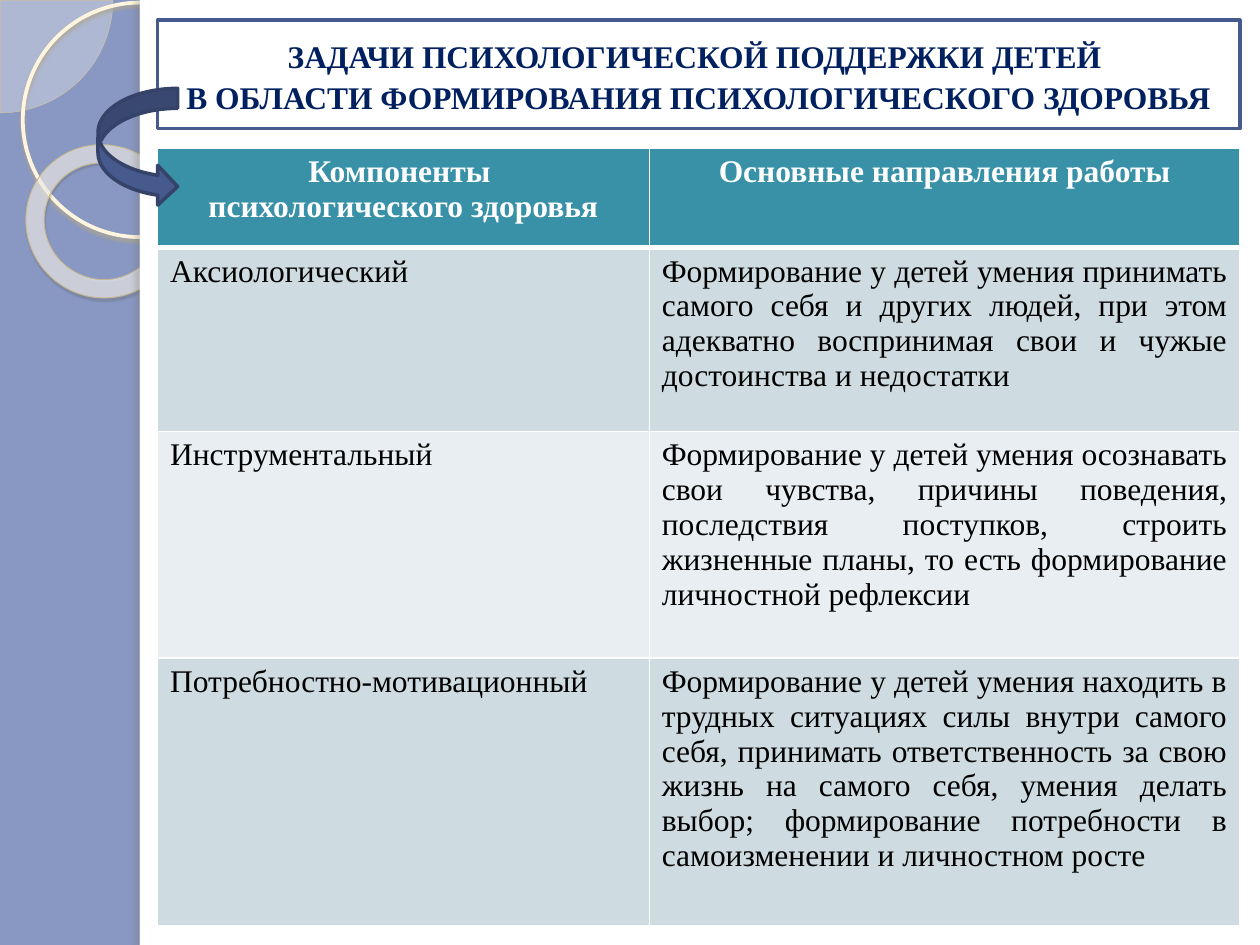
"""Build a slide on the tasks of psychological support for children."""
from dataclasses import dataclass
from typing import Any, Optional

from lxml import etree
from pptx import Presentation
from pptx.dml.color import RGBColor
from pptx.enum.shapes import MSO_SHAPE
from pptx.enum.text import MSO_ANCHOR, PP_ALIGN
from pptx.oxml.ns import qn
from pptx.util import Pt

PIE, OVAL, DONUT = MSO_SHAPE.CHORD, MSO_SHAPE.OVAL, MSO_SHAPE.DONUT
PIE = MSO_SHAPE.PIE
RECTANGLE, CURVED_ARROW = MSO_SHAPE.RECTANGLE, MSO_SHAPE.CURVED_RIGHT_ARROW
CENTER, JUSTIFY = PP_ALIGN.CENTER, PP_ALIGN.JUSTIFY
MIDDLE = MSO_ANCHOR.MIDDLE


@dataclass(frozen=True)
class Theme:
    """Colours and type of the slide."""
    font: str = "Times New Roman"
    size: float = 18
    background: str = "8898C3"
    white: str = "FFFFFF"
    accent: str = "475A8D"
    accent_dark: str = "354368"
    title: str = "002060"
    body: str = "000000"
    header_fill: str = "3891A7"
    bands: tuple[str, str] = ("CEDCE1", "E8EEF1")
    pie_fill: str = "FEFAF4"
    pie_line: str = "D3C39F"
    circle_line: str = "FFF5DE"
    circle_shadow: str = "B0A68F"
    ring_fill: str = "FFFDF8"
    ring_line: str = "C7B893"
    ring_shadow: str = "5A5444"
    edge_shadow: str = "736F63"


@dataclass(frozen=True)
class Shadow:
    """Outer shadow: opacity in percent, lengths in points, angle in degrees."""
    color: str
    opacity: int
    blur: float
    distance: float
    angle: int


@dataclass(frozen=True)
class Figure:
    """A preset shape with its box in points."""
    preset: Any
    box: tuple[float, float, float, float]
    fill: Optional[str] = None
    opacity: int = 100
    line: Optional[str] = None
    line_width: float = 0
    shadow: Optional[Shadow] = None
    rotation: float = 0
    adjustments: tuple[float, ...] = ()


THEME = Theme()
DECOR = (
    Figure(PIE, (-64, -64, 128.5, 128.5), THEME.pie_fill, 33, THEME.pie_line, 0.25,
           adjustments=(0, 54)),
    Figure(OVAL, (13, 1.5, 134, 134), line=THEME.circle_line, line_width=2.15,
           shadow=Shadow(THEME.circle_shadow, 85, 2, 2, 90)),
    Figure(DONUT, (14.5, 83, 88.5, 87), THEME.ring_fill, 60, THEME.ring_line, 0.58,
           Shadow(THEME.ring_shadow, 35, 1, 1.2, 75), 38.6, (0.12,)),
    Figure(RECTANGLE, (80, 0, 640, 540), THEME.white),
    Figure(RECTANGLE, (80, 0, 6, 540), THEME.white,
           shadow=Shadow(THEME.edge_shadow, 25, 3, 3, 180)),
)
TITLE_FRAME = Figure(RECTANGLE, (90, 11.5, 618.5, 62), THEME.white,
                     line=THEME.accent, line_width=2)
ARROW = Figure(CURVED_ARROW, (56, 50.5, 45.5, 67.5), THEME.accent,
               line=THEME.accent_dark, line_width=2)
TITLE = ("ЗАДАЧИ ПСИХОЛОГИЧЕСКОЙ ПОДДЕРЖКИ ДЕТЕЙ \v"
         "В ОБЛАСТИ ФОРМИРОВАНИЯ ПСИХОЛОГИЧЕСКОГО ЗДОРОВЬЯ")
TASKS = (
    ("Компоненты \nпсихологического здоровья", "Основные направления работы"),
    ("Аксиологический",
     "Формирование у детей умения принимать самого себя и других людей, при этом "
     "адекватно воспринимая свои и чужые достоинства и недостатки"),
    ("Инструментальный",
     "Формирование у детей умения осознавать свои чувства, причины поведения, "
     "последствия поступков, строить жизненные планы, то есть формирование "
     "личностной рефлексии"),
    ("Потребностно-мотивационный",
     "Формирование у детей умения находить в трудных ситуациях силы внутри самого "
     "себя, принимать ответственность за свою жизнь на самого себя, умения делать "
     "выбор; формирование потребности в самоизменении и личностном росте"),
)
TABLE_ORIGIN = (90, 84.5)
COLUMN_WIDTHS = (281, 337.5)
ROW_HEIGHTS = (57, 105, 129.5, 153)


def rgb(color: str) -> RGBColor:
    """Turn a hex string into a colour."""
    return RGBColor.from_string(color)


def paint(fill: Any, color: str) -> None:
    """Give a fill one solid colour."""
    fill.solid()
    fill.fore_color.rgb = rgb(color)


def add_alpha(color_element: Any, percent: int) -> None:
    """Set the opacity of a colour element."""
    etree.SubElement(color_element, qn("a:alpha"), val=str(percent * 1000))


def cast_shadow(properties: Any, shadow: Shadow) -> None:
    """Add an outer shadow to the effect list of a shape."""
    outer = etree.SubElement(
        properties.find(qn("a:effectLst")), qn("a:outerShdw"),
        blurRad=str(Pt(shadow.blur)), dist=str(Pt(shadow.distance)),
        dir=str(shadow.angle * 60000), algn="ctr", rotWithShape="0")
    add_alpha(etree.SubElement(outer, qn("a:srgbClr"), val=shadow.color), shadow.opacity)


def draw_figure(slide: Any, figure: Figure) -> Any:
    """Draw a preset shape and return it."""
    drawn = slide.shapes.add_shape(figure.preset, *map(Pt, figure.box))
    drawn.shadow.inherit = False
    drawn.rotation = figure.rotation
    for index, value in enumerate(figure.adjustments):
        drawn.adjustments[index] = value
    properties = drawn.element.spPr
    if figure.fill:
        paint(drawn.fill, figure.fill)
        if figure.opacity < 100:
            add_alpha(properties.find(qn("a:solidFill"))[0], figure.opacity)
    else:
        drawn.fill.background()
    if figure.line:
        paint(drawn.line.fill, figure.line)
        drawn.line.width = Pt(figure.line_width)
    else:
        drawn.line.fill.background()
    if figure.shadow:
        cast_shadow(properties, figure.shadow)
    return drawn


def write(frame: Any, words: str, color: str, bold: bool, alignment: Any,
          spacing: float = 1.0) -> None:
    """Fill a text frame with formatted paragraphs."""
    frame.text = words
    font_format = {"name": THEME.font, "size": Pt(THEME.size), "bold": bold}
    for paragraph in frame.paragraphs:
        paragraph.alignment = alignment
        paragraph.line_spacing = spacing
        for run in paragraph.runs:
            for attribute, value in font_format.items():
                setattr(run.font, attribute, value)
            run.font.color.rgb = rgb(color)


def draw_borders(cell: Any, bottom_width: float) -> None:
    """Outline a cell in white."""
    properties = cell._tc.get_or_add_tcPr()
    for side, width in {"L": 1, "R": 1, "T": 1, "B": bottom_width}.items():
        border = etree.SubElement(properties, qn(f"a:ln{side}"), w=str(Pt(width)))
        fill = etree.SubElement(border, qn("a:solidFill"))
        etree.SubElement(fill, qn("a:srgbClr"), val=THEME.white)


def draw_tasks(slide: Any) -> None:
    """Draw the table of health components and directions of work."""
    extent = (*TABLE_ORIGIN, sum(COLUMN_WIDTHS), sum(ROW_HEIGHTS))
    grid = slide.shapes.add_table(len(TASKS), len(COLUMN_WIDTHS), *map(Pt, extent)).table
    for column, width in zip(grid.columns, COLUMN_WIDTHS):
        column.width = Pt(width)
    for index, (row, height, entries) in enumerate(zip(grid.rows, ROW_HEIGHTS, TASKS)):
        row.height = Pt(height)
        header = index == 0
        fill = THEME.header_fill if header else THEME.bands[(index - 1) % 2]
        color = THEME.white if header else THEME.body
        for cell, words in zip(row.cells, entries):
            draw_borders(cell, 3 if header else 1)
            paint(cell.fill, fill)
            write(cell.text_frame, words, color, header, CENTER if header else JUSTIFY)
            if header and cell is not None:
                cell.text_frame.word_wrap = True


def main() -> None:
    """Compose and save the slide."""
    deck = Presentation()
    deck.slide_width, deck.slide_height = Pt(720), Pt(540)
    slide = deck.slides.add_slide(deck.slide_layouts[6])
    paint(slide.background.fill, THEME.background)
    for figure in DECOR:
        draw_figure(slide, figure)
    heading = draw_figure(slide, TITLE_FRAME).text_frame
    for attribute, value in {"word_wrap": True, "vertical_anchor": MIDDLE}.items():
        setattr(heading, attribute, value)
    write(heading, TITLE, THEME.title, True, CENTER, 1.09)
    draw_tasks(slide)
    draw_figure(slide, ARROW)
    deck.save("out.pptx")


if __name__ == "__main__":
    main()
